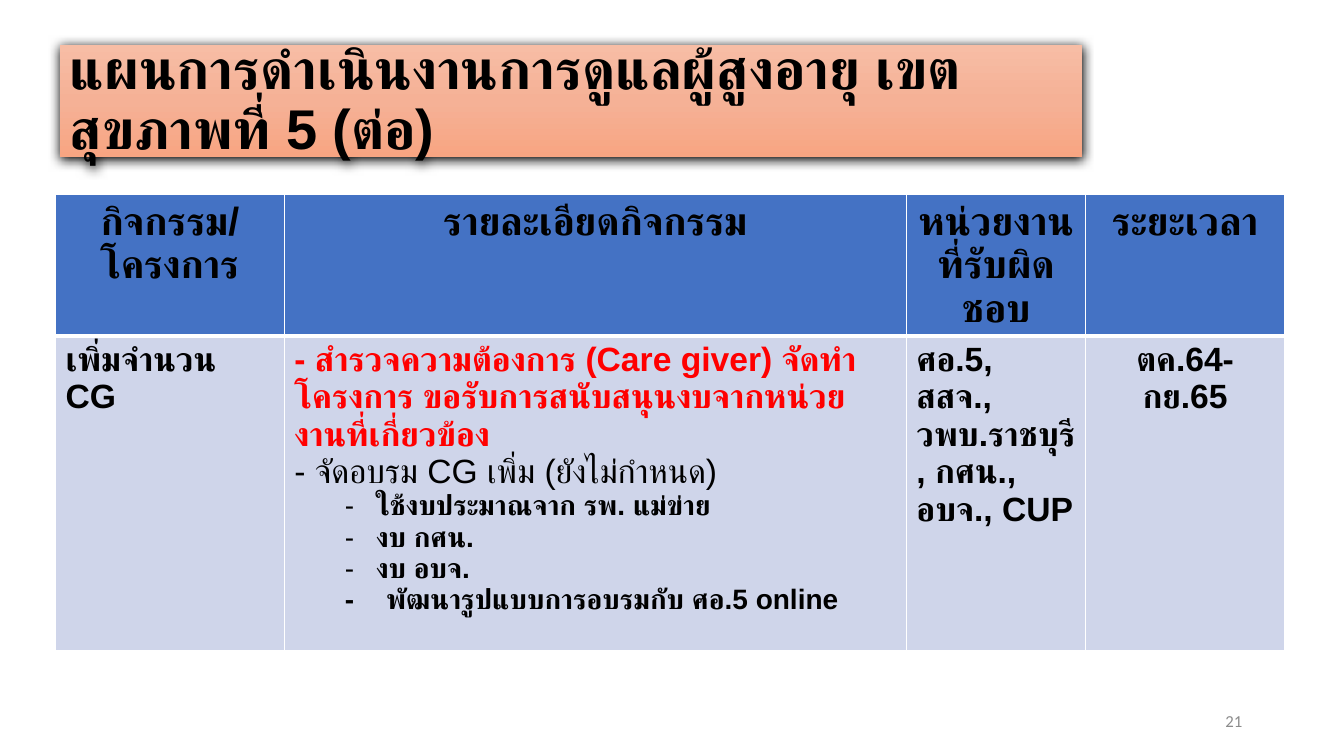
"""Build the elderly-care work plan slide."""
from dataclasses import dataclass

from lxml.etree import SubElement
from pptx import Presentation
from pptx.dml.color import RGBColor
from pptx.enum.text import MSO_ANCHOR, MSO_AUTO_SIZE, PP_ALIGN
from pptx.oxml import parse_xml
from pptx.oxml.ns import nsdecls, qn
from pptx.util import Inches, Pt


@dataclass(frozen=True)
class Theme:
    """Colours, fonts and type sizes of the slide."""
    font: str = "Arial"
    number_font: str = "Calibri"
    ink: str = "000000"
    alert: str = "FF0000"
    muted: str = "8C8C8C"
    header_fill: str = "4472C4"
    body_fill: str = "CFD5EA"
    border: str = "FFFFFF"
    banner: tuple[str, ...] = ("F7BDA5", "F5B196", "F8A582")
    title_size: int = 40
    header_size: int = 28
    body_size: int = 24
    detail_size: int = 20
    number_size: int = 12


THEME = Theme()


@dataclass(frozen=True)
class Line:
    """One paragraph with its type and indents."""
    text: str
    size: int = THEME.body_size
    color: str = THEME.ink
    bold: bool = True
    align: PP_ALIGN = PP_ALIGN.LEFT
    font: str = THEME.font
    margin: float = 0
    hanging: float = 0
    bullet: str = ""
    spacing: float = 1.0


@dataclass(frozen=True)
class Column:
    """One table column: width, heading and body lines."""
    width: float
    heading: str
    body: tuple[Line, ...]


def detail(text: str) -> Line:
    """Return a dashed second-level line."""
    return Line(text, THEME.detail_size, margin=0.81, hanging=0.31, bullet="-")


COLUMNS = (
    Column(2.27, "กิจกรรม/โครงการ", (Line("เพิ่มจำนวน CG"),)),
    Column(6.17, "รายละเอียดกิจกรรม", (
        Line("- สำรวจความต้องการ (Care giver) จัดทำโครงการ ขอรับการสนับสนุนงบจากหน่วยงานที่เกี่ยวข้อง",
             color=THEME.alert),
        Line("- จัดอบรม CG เพิ่ม (ยังไม่กำหนด)", bold=False),
        detail("ใช้งบประมาณจาก รพ. แม่ข่าย"),
        detail("งบ กศน."),
        detail("งบ อบจ."),
        Line("-\tพัฒนารูปแบบการอบรมกับ ศอ.5 online", THEME.detail_size,
             margin=0.91, hanging=0.41),
    )),
    Column(1.78, "หน่วยงานที่รับผิดชอบ",
           (Line("ศอ.5, สสจ., วพบ.ราชบุรี, กศน., อบจ., CUP"),)),
    Column(1.97, "ระยะเวลา", (Line("ตค.64-กย.65", align=PP_ALIGN.CENTER),)),
)
ROW_HEIGHTS = (1.26, 3.12)


def write(frame, lines: tuple[Line, ...]) -> None:
    """Fill a text frame with lines."""
    frame.word_wrap = True
    for index, line in enumerate(lines):
        paragraph = frame.add_paragraph() if index else frame.paragraphs[0]
        paragraph.alignment = line.align
        paragraph.line_spacing = line.spacing
        properties = paragraph._p.get_or_add_pPr()
        if line.margin:
            properties.set("marL", str(Inches(line.margin)))
            properties.set("indent", str(-Inches(line.hanging)))
        if line.bullet:
            SubElement(properties, qn("a:buFont"), typeface=line.font)
            SubElement(properties, qn("a:buChar"), char=line.bullet)
        run = paragraph.add_run()
        run.text = line.text
        run.font.size = Pt(line.size)
        run.font.bold = line.bold
        run.font.name = line.font
        run.font.color.rgb = RGBColor.from_string(line.color)
        SubElement(run._r.get_or_add_rPr(), qn("a:cs"), typeface=line.font)


def paint_cell(cell, fill: str, top: float, bottom: float) -> None:
    """Set the borders and fill of a table cell."""
    cell.fill.solid()
    cell.fill.fore_color.rgb = RGBColor.from_string(fill)
    properties = cell._tc.get_or_add_tcPr()
    sides = (("lnL", 1), ("lnR", 1), ("lnT", top), ("lnB", bottom))
    for position, (side, width) in enumerate(sides):
        properties.insert(position, parse_xml(
            f'<a:{side} {nsdecls("a")} w="{Pt(width)}"><a:solidFill>'
            f'<a:srgbClr val="{THEME.border}"/></a:solidFill></a:{side}>'))


def add_plan(slide) -> None:
    """Add the activity table."""
    plan = slide.shapes.add_table(
        len(ROW_HEIGHTS), len(COLUMNS), Inches(0.55), Inches(1.93),
        Inches(sum(column.width for column in COLUMNS)), Inches(sum(ROW_HEIGHTS))).table
    for row, height in zip(plan.rows, ROW_HEIGHTS):
        row.height = Inches(height)
    for index, column in enumerate(COLUMNS):
        plan.columns[index].width = Inches(column.width)
        heading, body = plan.cell(0, index), plan.cell(1, index)
        write(heading.text_frame, (Line(column.heading, THEME.header_size, align=PP_ALIGN.CENTER),))
        write(body.text_frame, column.body)
        paint_cell(heading, THEME.header_fill, 1, 3)
        paint_cell(body, THEME.body_fill, 3, 1)


def add_banner(slide) -> None:
    """Format the title as a shaded banner."""
    title = slide.shapes.title
    title.left, title.top = Inches(0.59), Inches(0.45)
    title.width, title.height = Inches(10.14), Inches(1.11)
    write(title.text_frame, (Line("แผนการดำเนินงานการดูแลผู้สูงอายุ เขตสุขภาพที่ 5 (ต่อ)",
                                  THEME.title_size, spacing=0.9),))
    title.text_frame.auto_size = MSO_AUTO_SIZE.NONE
    title.text_frame.vertical_anchor = MSO_ANCHOR.MIDDLE
    stops = "".join(f'<a:gs pos="{index * 50000}"><a:srgbClr val="{color}"/></a:gs>'
                    for index, color in enumerate(THEME.banner))
    properties = title._element.spPr
    properties.append(parse_xml(
        f'<a:gradFill {nsdecls("a")}><a:gsLst>{stops}</a:gsLst>'
        '<a:lin ang="5400000" scaled="0"/></a:gradFill>'))
    properties.append(parse_xml(
        f'<a:effectLst {nsdecls("a")}><a:outerShdw blurRad="{Pt(8.5)}" dist="{Pt(1)}" '
        f'dir="5400000" algn="ctr" rotWithShape="0"><a:srgbClr val="{THEME.ink}"/>'
        '</a:outerShdw></a:effectLst>'))


def add_page_number(slide) -> None:
    """Add the page number at the lower right."""
    frame = slide.shapes.add_textbox(Inches(9.42), Inches(6.95), Inches(3), Inches(0.4)).text_frame
    frame.vertical_anchor = MSO_ANCHOR.MIDDLE
    write(frame, (Line("21", THEME.number_size, THEME.muted, False,
                       PP_ALIGN.RIGHT, THEME.number_font),))


def main() -> None:
    """Build and save the slide."""
    deck = Presentation()
    deck.slide_width, deck.slide_height = Inches(13.33), Inches(7.5)
    slide = deck.slides.add_slide(deck.slide_layouts[5])
    add_plan(slide)
    add_banner(slide)
    add_page_number(slide)
    deck.save("out.pptx")


if __name__ == "__main__":
    main()
